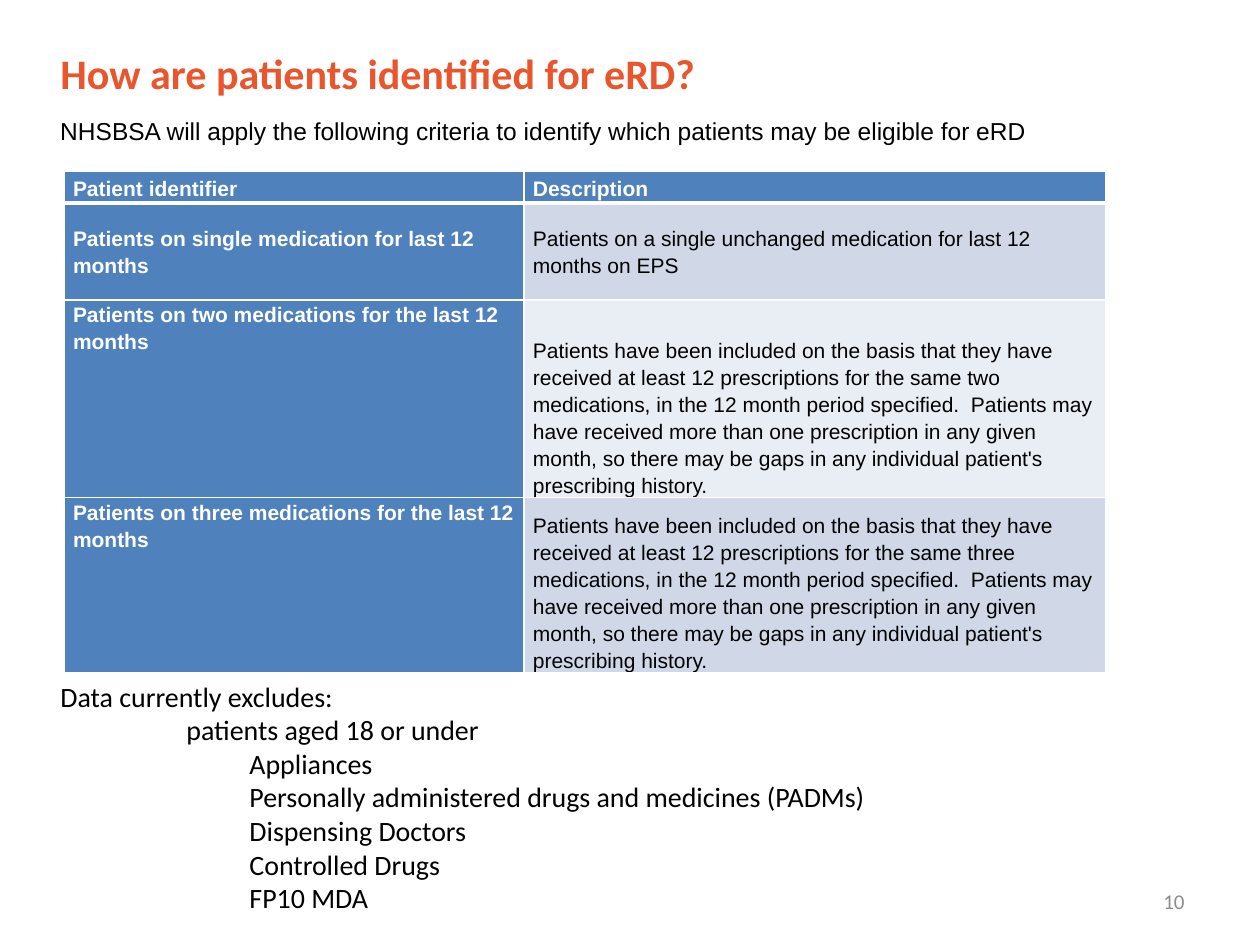
import pptx
import pptx.util
import pptx.dml.color
import pptx.enum.text
import pptx.oxml.ns
from lxml import etree

Pt = pptx.util.Pt
RGB = pptx.dml.color.RGBColor
Anchor = pptx.enum.text.MSO_ANCHOR
Align = pptx.enum.text.PP_ALIGN
qn = pptx.oxml.ns.qn

ORANGE = RGB(0xE9, 0x55, 0x2D)
BLUE = RGB(0x4F, 0x81, 0xBD)
PALE = RGB(0xD0, 0xD8, 0xE8)
LIGHT = RGB(0xE9, 0xED, 0xF4)
GREY = RGB(0x8C, 0x8C, 0x8C)
BLACK = RGB(0, 0, 0)
WHITE = RGB(255, 255, 255)

WIDE, TALL = pptx.util.Inches(10), pptx.util.Inches(7.5)
UNIT = WIDE / 100

LONG = ("Patients have been included on the basis that they have received at least "
        "12 prescriptions for the same {} medications, in the 12 month period specified.  "
        "Patients may have received more than one prescription in any given month, so "
        "there may be gaps in any individual patient's prescribing history.")
ROWS = [
    (2.5, Anchor.MIDDLE, Anchor.MIDDLE, BLUE,
     "Patient identifier", "Description"),
    (7.7, Anchor.MIDDLE, Anchor.MIDDLE, PALE,
     "Patients on single medication for last 12 months",
     "Patients on a single unchanged medication for last 12 months on EPS"),
    (15.7, Anchor.TOP, Anchor.BOTTOM, LIGHT,
     "Patients on two medications for the last 12 months", LONG.format("two")),
    (13.9, Anchor.TOP, Anchor.BOTTOM, PALE,
     "Patients on three medications for the last 12 months", LONG.format("three")),
]
COLS = (36.5, 46.2)
ITEMS = [
    ("Data currently excludes:", 0, 0),
    ("patients aged 18 or under", 0, 10),
    ("Appliances", 1, 15),
    ("Personally administered drugs and medicines (PADMs)", 1, 15),
    ("Dispensing Doctors", 1, 15),
    ("Controlled Drugs", 1, 15),
    ("FP10 MDA", 1, 15),
]


def grid(*marks):
    return [round(mark * UNIT) for mark in marks]


def place(shape, box):
    shape.left, shape.top, shape.width, shape.height = grid(*box)


def write(para, text, face, size, tint, bold=False):
    run = para.add_run()
    run.text = text
    run.font.name = face
    run.font.size = Pt(size)
    run.font.bold = bold
    run.font.color.rgb = tint


def head(slide, box):
    title = slide.shapes.title
    place(title, box)
    frame = title.text_frame
    frame.auto_size = pptx.enum.text.MSO_AUTO_SIZE.NONE
    frame.vertical_anchor = Anchor.TOP
    para = frame.paragraphs[0]
    para.alignment = Align.LEFT
    write(para, "How are patients identified for eRD?", "Calibri", 24, ORANGE, True)


def note(slide, box, text, face, size, tint, align=Align.LEFT, anchor=Anchor.TOP):
    frame = slide.shapes.add_textbox(*grid(*box)).text_frame
    frame.word_wrap = True
    frame.vertical_anchor = anchor
    para = frame.paragraphs[0]
    para.alignment = align
    write(para, text, face, size, tint)


def edge(cell, side, width):
    line = etree.SubElement(cell._tc.get_or_add_tcPr(), qn("a:ln" + side), w=str(Pt(width)))
    fill = etree.SubElement(line, qn("a:solidFill"))
    etree.SubElement(fill, qn("a:srgbClr"), val=str(WHITE))


def fill_cell(cell, text, anchor, back, tint, bold, rims):
    cell.margin_left = cell.margin_right = grid(0.7)[0]
    cell.margin_top = cell.margin_bottom = 0
    cell.vertical_anchor = anchor
    for side, width in rims.items():
        edge(cell, side, width)
    cell.fill.solid()
    cell.fill.fore_color.rgb = back
    para = cell.text_frame.paragraphs[0]
    para.line_spacing = 1.15
    write(para, text, "Arial", 12, tint, bold)


def chart_rules(slide, box):
    table = slide.shapes.add_table(len(ROWS), len(COLS), *grid(*box)).table
    for col, width in zip(table.columns, grid(*COLS)):
        col.width = width
    for i, (high, left, right, back, name, text) in enumerate(ROWS):
        table.rows[i].height = grid(high)[0]
        rims = {"L": 1, "R": 1, "T": 3 if i == 1 else 1, "B": 3 if i == 0 else 1}
        top = i == 0
        fill_cell(table.cell(i, 0), name, left, BLUE, WHITE, True, rims)
        fill_cell(table.cell(i, 1), text, right, back, WHITE if top else BLACK, top, rims)


def listing(slide, box):
    body = slide.placeholders[1]
    place(body, box)
    frame = body.text_frame
    frame.auto_size = pptx.enum.text.MSO_AUTO_SIZE.NONE
    for i, (text, level, inset) in enumerate(ITEMS):
        para = frame.add_paragraph() if i else frame.paragraphs[0]
        para.level = level
        props = para._p.get_or_add_pPr()
        props.set("marL", str(grid(inset)[0]))
        props.set("indent", "0")
        etree.SubElement(props, qn("a:buNone"))
        para.space_before = Pt(0)
        write(para, text, "Calibri", 16, BLACK)


def main():
    deck = pptx.Presentation()
    deck.slide_width, deck.slide_height = WIDE, TALL
    slide = deck.slides.add_slide(deck.slide_layouts[1])
    head(slide, (3.8, 3.3, 91.2, 6.3))
    note(slide, (3.8, 8.7, 79.3, 3.4),
         "NHSBSA will apply the following criteria to identify which patients "
         "may be eligible for eRD", "Arial", 14, BLACK)
    chart_rules(slide, (5.1, 13.6, sum(COLS), sum(row[0] for row in ROWS)))
    listing(slide, (3.8, 53.4, 87.5, 19.9))
    note(slide, (71.7, 69.5, 23.3, 4), "10", "Calibri", 12, GREY,
         Align.RIGHT, Anchor.MIDDLE)
    deck.save("out.pptx")


if __name__ == "__main__":
    main()
